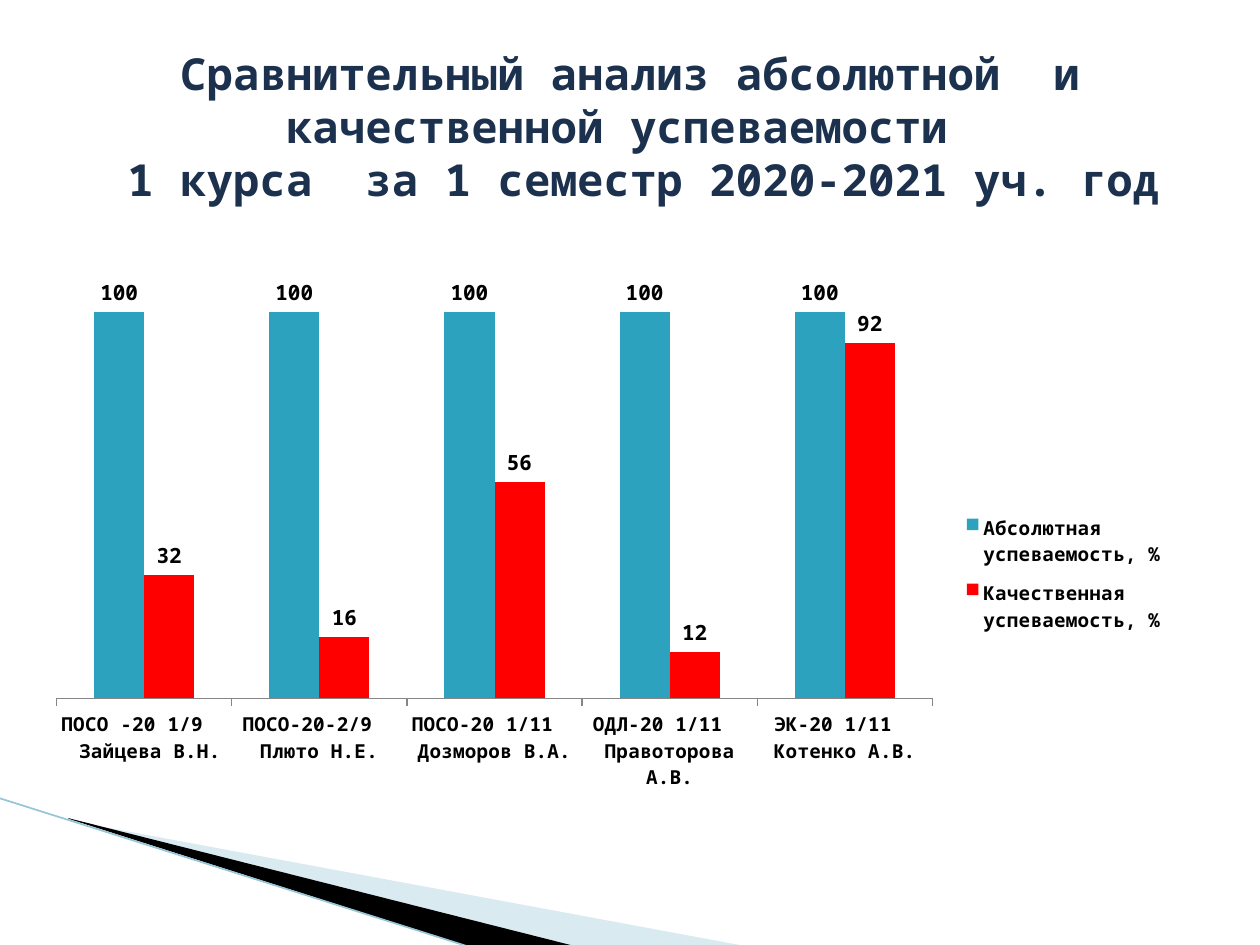
from lxml import etree
from pptx import Presentation
from pptx.chart.data import CategoryChartData as ChartData
from pptx.dml.color import RGBColor as RGB
from pptx.enum.chart import XL_CHART_TYPE as Kind
from pptx.enum.chart import XL_LABEL_POSITION as Label
from pptx.enum.chart import XL_LEGEND_POSITION as Side
from pptx.enum.chart import XL_TICK_MARK as Tick
from pptx.enum.shapes import MSO_CONNECTOR as Link
from pptx.enum.text import MSO_ANCHOR as Anchor
from pptx.enum.text import MSO_AUTO_SIZE as Fit
from pptx.enum.text import PP_ALIGN as Align
from pptx.oxml.ns import qn
from pptx.util import Pt

FONT = "Noto Sans Mono"
COLORS = {
    "title": "1C314E",
    "text": "000000",
    "total": "2DA2BF",
    "good": "FF0000",
    "axis": "868686",
    "pale": "A0CBDC",
    "dark": "000000",
    "edge": "97C5D8",
}
TITLE = [
    "Сравнительный анализ абсолютной  и качественной успеваемости ",
    " 1 курса  за 1 семестр 2020-2021 уч. год",
]
GROUPS = [
    "ПОСО -20 1/9    Зайцева В.Н.",
    "ПОСО-20-2/9   Плюто Н.Е.",
    "ПОСО-20 1/11   Дозморов В.А.",
    "ОДЛ-20 1/11   Правоторова А.В.",
    "ЭК-20 1/11   Котенко А.В.",
]
SERIES = [
    ("Абсолютная успеваемость, %", [100] * 5, "total"),
    ("Качественная успеваемость, %", [32, 16, 56, 12, 92], "good"),
]


def color(name):
    return RGB.from_string(COLORS[name])


def style(font, size, name="text", bold=True):
    font.name = FONT
    font.size = Pt(size)
    font.bold = bold
    font.color.rgb = color(name)


def add_wedge(slide, left, top, points, name, alpha=None):
    spots = [(Pt(left + x), Pt(top + y)) for x, y in points]
    form = slide.shapes.build_freeform(*spots[0], scale=1.0)
    form.add_line_segments(spots[1:], close=True)
    wedge = form.convert_to_shape()
    wedge.shadow.inherit = False
    wedge.fill.solid()
    wedge.fill.fore_color.rgb = color(name)
    wedge.line.fill.background()
    if alpha:
        tint = wedge.fill._xPr.find(".//" + qn("a:srgbClr"))
        etree.SubElement(tint, qn("a:alpha"), val=str(alpha * 1000))


def add_corner(slide, left, top, width, height):
    pale = [(40, 13), (width, height), (329, height), (40, 12)]
    dark = [(39, 11.5), (330, height), (268.5, height), (39.5, 12)]
    add_wedge(slide, left, top, pale, "pale", 40)
    add_wedge(slide, left, top, dark, "dark")
    edge = slide.shapes.add_connector(
        Link.STRAIGHT, Pt(left - 0.7), Pt(top), Pt(left + 268), Pt(top + height)
    )
    edge.line.color.rgb = color("edge")
    edge.line.width = Pt(0.95)
    etree.SubElement(edge._element.spPr, qn("a:effectLst"))


def add_title(slide, left, top, width, height):
    title = slide.shapes.title
    title.left, title.top = Pt(left), Pt(top)
    title.width, title.height = Pt(width), Pt(height)
    frame = title.text_frame
    frame.word_wrap = True
    frame.auto_size = Fit.NONE
    frame.vertical_anchor = Anchor.MIDDLE
    para = frame.paragraphs[0]
    para.alignment = Align.CENTER
    for i, line in enumerate(TITLE):
        if i:
            para.add_line_break()
        run = para.add_run()
        run.text = line
        style(run.font, 25.2, "title")


def set_layout(host, index, box, inner=False):
    for old in host.findall(qn("c:layout")):
        host.remove(old)
    layout = etree.Element(qn("c:layout"))
    manual = etree.SubElement(layout, qn("c:manualLayout"))
    if inner:
        etree.SubElement(manual, qn("c:layoutTarget"), val="inner")
    for tag in ("xMode", "yMode"):
        etree.SubElement(manual, qn("c:" + tag), val="edge")
    for tag, value in zip("xywh", box):
        etree.SubElement(manual, qn("c:" + tag), val=str(value))
    host.insert(index, layout)


def add_bars(slide, left, top, width, height):
    data = ChartData()
    data.categories = GROUPS
    for name, values, _ in SERIES:
        data.add_series(name, values)
    chart = slide.shapes.add_chart(
        Kind.COLUMN_CLUSTERED, Pt(left), Pt(top), Pt(width), Pt(height), data
    ).chart
    style(chart.font, 10, bold=False)
    chart.has_title = False

    plot = chart.plots[0]
    plot.gap_width = 150
    plot.overlap = 0
    plot.vary_by_categories = False
    for bars, (_, _, name) in zip(plot.series, SERIES):
        bars.format.fill.solid()
        bars.format.fill.fore_color.rgb = color(name)
        labels = bars.data_labels
        labels.show_value = True
        labels.position = Label.OUTSIDE_END
        style(labels.font, 12)

    groups = chart.category_axis
    groups.major_tick_mark = Tick.OUTSIDE
    groups.format.line.color.rgb = color("axis")
    style(groups.tick_labels.font, 11)
    scale = chart.value_axis
    scale.visible = False
    scale.has_major_gridlines = False
    scale.minimum_scale, scale.maximum_scale = 0, 120

    chart.has_legend = True
    legend = chart.legend
    legend.position = Side.RIGHT
    legend.include_in_layout = False
    style(legend.font, 11)
    set_layout(legend._element, 1, (0.73, 0.45, 0.17, 0.24))
    area = chart._chartSpace.chart.plotArea
    set_layout(area, 0, (0.01, 0, 0.7, 0.78), inner=True)


def main():
    deck = Presentation()
    deck.slide_width, deck.slide_height = Pt(720), Pt(540)
    slide = deck.slides.add_slide(deck.slide_layouts[5])
    add_corner(slide, 0, 456, 428, 85)
    add_title(slide, 36, 21.6, 648, 100.8)
    add_bars(slide, 25.2, 134, 715, 340)
    deck.save("out.pptx")


if __name__ == "__main__":
    main()
